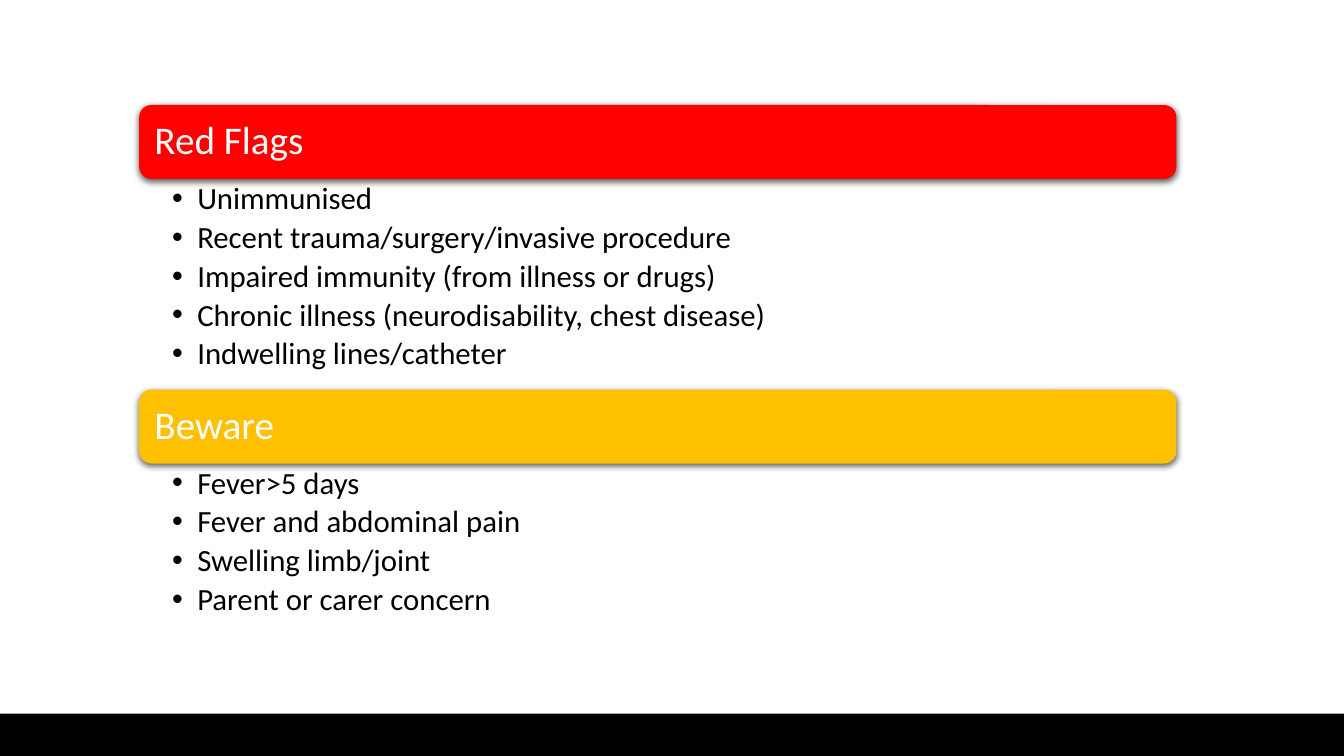
"""Build a slide listing red flags and points to beware of."""
from lxml import etree
from pptx import Presentation
from pptx.dml.color import RGBColor
from pptx.enum.shapes import MSO_SHAPE
from pptx.enum.text import MSO_ANCHOR, PP_ALIGN
from pptx.oxml import parse_xml
from pptx.oxml.ns import qn
from pptx.util import Pt

SECTIONS = [
    ("Red Flags", "FF0000", [
        "Unimmunised",
        "Recent trauma/surgery/invasive procedure",
        "Impaired immunity (from illness or drugs)",
        "Chronic illness (neurodisability, chest disease)",
        "Indwelling lines/catheter",
    ]),
    ("Beware", "FFC000", [
        "Fever>5 days",
        "Fever and abdominal pain",
        "Swelling limb/joint",
        "Parent or carer concern",
    ]),
]

RECTANGLE, ROUNDED = MSO_SHAPE.RECTANGLE, MSO_SHAPE.ROUNDED_RECTANGLE
TOP, MIDDLE = MSO_ANCHOR.TOP, MSO_ANCHOR.MIDDLE
LEFT = PP_ALIGN.LEFT

SLIDE_WIDTH, SLIDE_HEIGHT = 960, 540
FOOTER_TOP = 509.8
SECTION_LEFT, SECTION_TOP, SECTION_WIDTH = 99.4, 75, 740.9
HEADER_HEIGHT = 52.8
ITEM_HEIGHT, LIST_TRIM = 31.7, 8
BULLET_INDENT = 18

SHADOW = (
    '<a:effectLst xmlns:a="http://schemas.openxmlformats.org/drawingml/2006/main">'
    '<a:outerShdw blurRad="57150" dist="19050" dir="5400000" algn="ctr" rotWithShape="0">'
    '<a:srgbClr val="000000"><a:alpha val="63000"/></a:srgbClr>'
    '</a:outerShdw></a:effectLst>'
)


def color(value):
    return RGBColor.from_string(value)


def add_block(slide, kind, left, top, width, height, fill):
    shape = slide.shapes.add_shape(kind, Pt(left), Pt(top), Pt(width), Pt(height))
    shape.shadow.inherit = False
    shape.fill.solid()
    shape.fill.fore_color.rgb = color(fill)
    shape.line.fill.background()
    return shape


def add_bullet(paragraph):
    properties = paragraph._p.get_or_add_pPr()
    properties.set("marL", str(Pt(BULLET_INDENT)))
    properties.set("indent", str(-Pt(BULLET_INDENT)))
    etree.SubElement(properties, qn("a:buFont")).set("typeface", "Arial")
    etree.SubElement(properties, qn("a:buChar")).set("char", "•")


def write(shape, lines, size, font_color, margins, anchor=TOP, space_after=0, bullets=False):
    frame = shape.text_frame
    frame.word_wrap = True
    frame.vertical_anchor = anchor
    (frame.margin_left, frame.margin_top,
     frame.margin_right, frame.margin_bottom) = map(Pt, margins)
    for index, line in enumerate(lines):
        paragraph = frame.add_paragraph() if index else frame.paragraphs[0]
        paragraph.text = line
        paragraph.alignment = LEFT
        paragraph.line_spacing = 0.9
        paragraph.space_after = Pt(space_after)
        if bullets:
            add_bullet(paragraph)
        paragraph.font.name = "Calibri"
        paragraph.font.size = Pt(size)
        paragraph.font.color.rgb = color(font_color)


def add_section(slide, top, title, fill, items):
    header = add_block(slide, ROUNDED, SECTION_LEFT, top, SECTION_WIDTH, HEADER_HEIGHT, fill)
    properties = header._element.spPr
    properties.replace(properties.find(qn("a:effectLst")), parse_xml(SHADOW))
    write(header, [title], 28, "FFFFFF", (8.4, 6, 8.4, 6), anchor=MIDDLE)

    list_top = top + HEADER_HEIGHT
    list_height = ITEM_HEIGHT * len(items) - LIST_TRIM
    item_list = slide.shapes.add_textbox(
        Pt(SECTION_LEFT), Pt(list_top), Pt(SECTION_WIDTH), Pt(list_height))
    write(item_list, items, 22, "000000", (23.5, 2.8, 15.6, 2.8), space_after=4, bullets=True)
    return list_top + list_height


def main():
    presentation = Presentation()
    presentation.slide_width = Pt(SLIDE_WIDTH)
    presentation.slide_height = Pt(SLIDE_HEIGHT)
    slide = presentation.slides.add_slide(presentation.slide_layouts[6])
    add_block(slide, RECTANGLE, 0, FOOTER_TOP, SLIDE_WIDTH, SLIDE_HEIGHT - FOOTER_TOP, "000000")
    top = SECTION_TOP
    for title, fill, items in SECTIONS:
        top = add_section(slide, top, title, fill, items)
    presentation.save("out.pptx")


if __name__ == "__main__":
    main()
